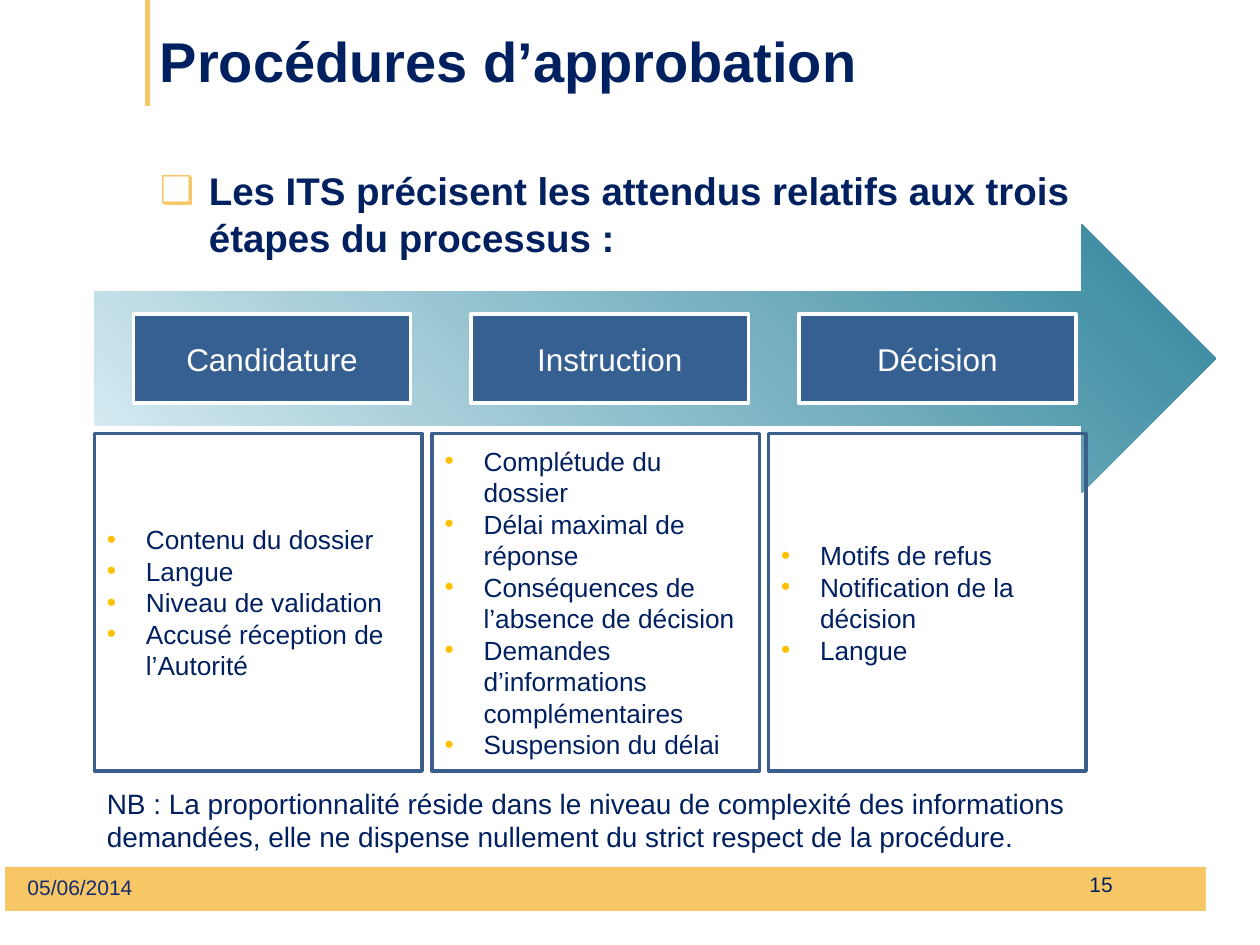
"""Build the slide on the three stages of the approval process."""
from dataclasses import dataclass

from lxml import etree
from pptx import Presentation
from pptx.dml.color import RGBColor
from pptx.enum.shapes import MSO_CONNECTOR, MSO_SHAPE
from pptx.enum.text import MSO_ANCHOR, PP_ALIGN
from pptx.oxml.ns import qn
from pptx.util import Inches, Pt

RECT, ARROW = MSO_SHAPE.RECTANGLE, MSO_SHAPE.RIGHT_ARROW
STRAIGHT = MSO_CONNECTOR.STRAIGHT
TOP, MIDDLE = MSO_ANCHOR.TOP, MSO_ANCHOR.MIDDLE
LEFT, CENTER, RIGHT = PP_ALIGN.LEFT, PP_ALIGN.CENTER, PP_ALIGN.RIGHT

FONT = "Arial"
COLORS = {
    "white": "FFFFFF", "navy": "002060", "date": "162A71", "gold": "F7C765",
    "amber": "FFC000", "blue": "376092", "border": "3A5F8C",
    "pale": "DBEEF4", "teal": "31859C",
}


@dataclass
class Box:
    left: float
    top: float
    width: float
    height: float

    def place(self) -> list:
        return [Inches(v) for v in (self.left, self.top, self.width, self.height)]


@dataclass
class Stage:
    name: str
    label: Box
    panel: Box
    points: list[str]


STAGES = [
    Stage("Candidature", Box(1.06, 2.49, 2.2, 0.71), Box(0.75, 3.44, 2.6, 2.68),
          ["Contenu du dossier", "Langue", "Niveau de validation",
           "Accusé réception de l’Autorité"]),
    Stage("Instruction", Box(3.74, 2.49, 2.2, 0.71), Box(3.43, 3.44, 2.6, 2.68),
          ["Complétude du dossier", "Délai maximal de réponse",
           "Conséquences de l’absence de décision",
           "Demandes d’informations complémentaires", "Suspension du délai"]),
    Stage("Décision", Box(6.34, 2.49, 2.2, 0.71), Box(6.1, 3.44, 2.52, 2.68),
          ["Motifs de refus", "Notification de la décision", "Langue"]),
]


def rgb(name: str) -> RGBColor:
    return RGBColor.from_string(COLORS[name])


def mark(para, sign: str, color: str, indent: float) -> None:
    props = para._p.get_or_add_pPr()
    props.set("marL", str(Inches(indent)))
    props.set("indent", str(-Inches(indent)))
    tint = etree.SubElement(props, qn("a:buClr"))
    etree.SubElement(tint, qn("a:srgbClr"), val=COLORS[color])
    etree.SubElement(props, qn("a:buFont"), typeface=FONT)
    etree.SubElement(props, qn("a:buChar"), char=sign)


def write(shape, lines: list[str], *, size: float, color: str = "navy",
          bold: bool = False, align=LEFT, anchor=TOP, sign: str = "",
          tint: str = "amber", indent: float = 0.31) -> None:
    frame = shape.text_frame
    frame.word_wrap = True
    frame.vertical_anchor = anchor
    for i, line in enumerate(lines):
        para = frame.add_paragraph() if i else frame.paragraphs[0]
        para.alignment = align
        if sign:
            mark(para, sign, tint, indent)
        run = para.add_run()
        run.text = line
        font = run.font
        font.name, font.size, font.bold = FONT, Pt(size), bold
        font.color.rgb = rgb(color)


def draw(slide, box: Box, kind=RECT, fill: str = "", line: str = ""):
    shape = slide.shapes.add_shape(kind, *box.place())
    shape.shadow.inherit = False
    if fill:
        shape.fill.solid()
        shape.fill.fore_color.rgb = rgb(fill)
    else:
        shape.fill.background()
    if line:
        shape.line.color.rgb = rgb(line)
        shape.line.width = Pt(2)
    else:
        shape.line.fill.background()
    return shape


def label(slide, box: Box, text: str, **style) -> None:
    write(slide.shapes.add_textbox(*box.place()), [text], **style)


def frame_page(slide) -> None:
    draw(slide, Box(0.04, 6.88, 9.76, 0.35), fill="gold")
    rule = slide.shapes.add_connector(
        STRAIGHT, Inches(1.17), Inches(0), Inches(1.17), Inches(0.84))
    rule.line.color.rgb = rgb("gold")
    rule.line.width = Pt(2.75)
    etree.SubElement(rule._element.spPr, qn("a:effectLst"))
    draw(slide, Box(9.57, 6.74, 0.28, 0.66), fill="white")


def draw_arrow(slide) -> None:
    fill = draw(slide, Box(0.75, 1.78, 8.9, 2.13), ARROW).fill
    fill.gradient()
    fill.gradient_angle = 45
    for stop, name in zip(fill.gradient_stops, ("pale", "teal")):
        stop.color.rgb = rgb(name)


def draw_stage(slide, stage: Stage) -> None:
    head = draw(slide, stage.label, fill="blue", line="white")
    write(head, [stage.name], size=18, color="white", align=CENTER, anchor=MIDDLE)
    panel = draw(slide, stage.panel, line="border")
    write(panel, stage.points, size=15, anchor=MIDDLE, sign="•")


def main() -> None:
    deck = Presentation()
    deck.slide_width, deck.slide_height = Inches(10), Inches(7.5)
    slide = deck.slides.add_slide(deck.slide_layouts[6])
    frame_page(slide)
    label(slide, Box(1.17, 0.05, 7.24, 0.86), "Procédures d’approbation",
          size=32, bold=True, anchor=MIDDLE)
    label(slide, Box(1.17, 1.28, 7.53, 5.07),
          "Les ITS précisent les attendus relatifs aux trois étapes du processus :",
          size=22, bold=True, sign="❑", tint="gold", indent=0.39)
    draw_arrow(slide)
    for stage in STAGES:
        draw_stage(slide, stage)
    label(slide, Box(0.75, 6.19, 8.27, 0.64),
          "NB : La proportionnalité réside dans le niveau de complexité des "
          "informations demandées, elle ne dispense nullement du strict respect "
          "de la procédure.", size=16)
    label(slide, Box(6.6, 6.82, 2.33, 0.4), "15", size=12, align=RIGHT, anchor=MIDDLE)
    label(slide, Box(0.12, 6.89, 2.33, 0.32), "05/06/2014", size=12, color="date")
    deck.save("out.pptx")


if __name__ == "__main__":
    main()
